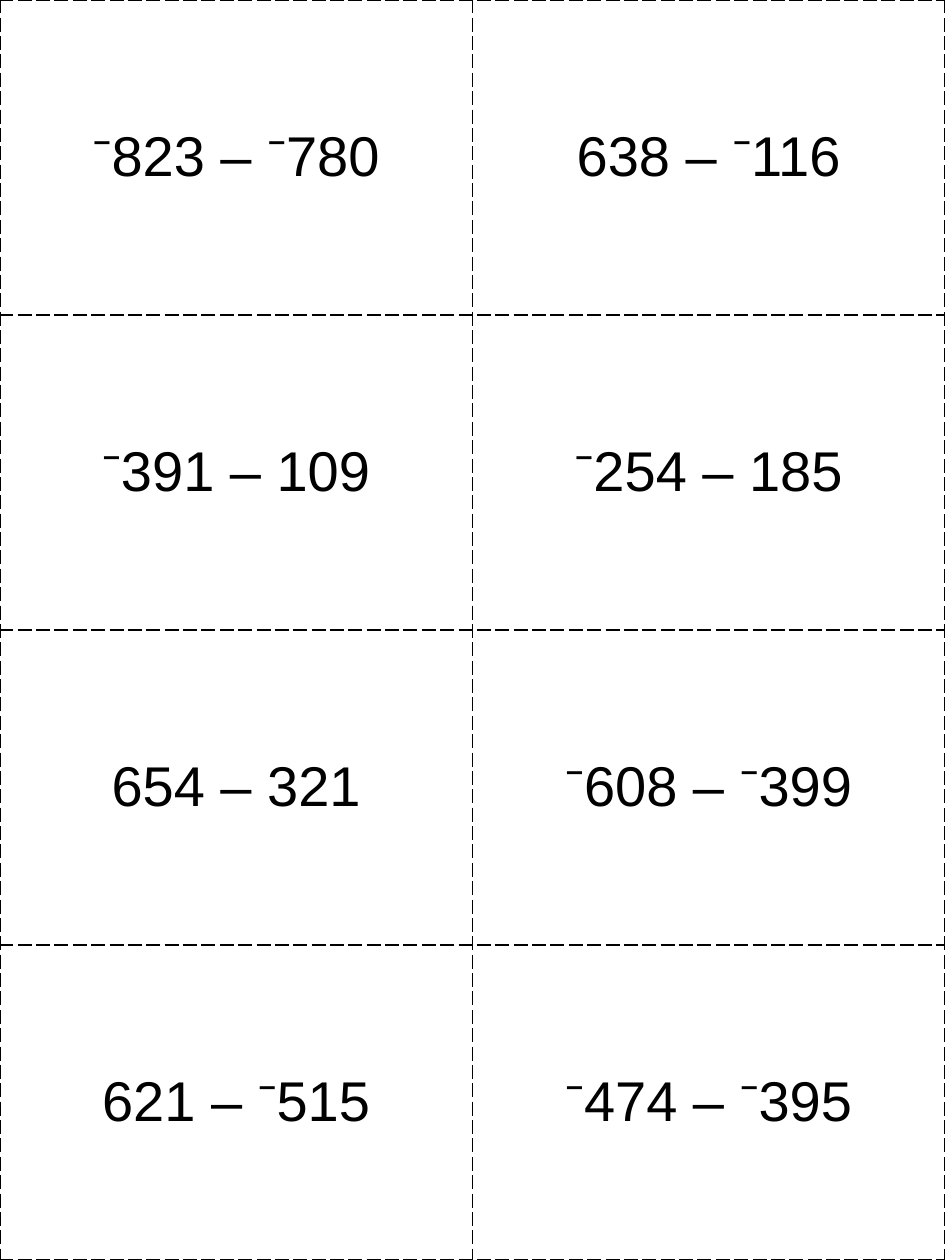
from pptx import Presentation
from pptx.dml.color import RGBColor
from pptx.enum.text import MSO_ANCHOR as ANCHOR, PP_ALIGN as ALIGN
from pptx.oxml.ns import qn
from pptx.util import Inches, Pt
from lxml.etree import SubElement

BLACK = RGBColor(0x00, 0x00, 0x00)
FONT = {"name": "Arial", "size": Pt(32), "bold": False}
CARDS = [
    ("⁻823 – ⁻780", "638 – ⁻116"),
    ("⁻391 – 109", "⁻254 – 185"),
    ("654 – 321", "⁻608 – ⁻399"),
    ("621 – ⁻515", "⁻474 – ⁻395"),
]


def add_borders(cell):
    tcPr = cell._tc.get_or_add_tcPr()
    for side in ("lnL", "lnR", "lnT", "lnB"):
        ln = SubElement(tcPr, qn(f"a:{side}"), w=str(Pt(1)))
        fill = SubElement(ln, qn("a:solidFill"))
        SubElement(fill, qn("a:srgbClr"), val=str(BLACK))
        SubElement(ln, qn("a:prstDash"), val="lgDash")


prs = Presentation()
prs.slide_width, prs.slide_height = Inches(7.5), Inches(10)
s = prs.slides.add_slide(prs.slide_layouts[6])

# Card grid fills the whole page, in equal columns and rows
table = s.shapes.add_table(len(CARDS), len(CARDS[0]), 0, 0,
                           prs.slide_width, prs.slide_height).table
table.first_row = table.horz_banding = False

# One subtraction per card
for row, problems in enumerate(CARDS):
    for col, problem in enumerate(problems):
        cell = table.cell(row, col)
        add_borders(cell)
        cell.fill.background()
        cell.vertical_anchor = ANCHOR.MIDDLE
        p = cell.text_frame.paragraphs[0]
        p.alignment = ALIGN.CENTER
        r = p.add_run()
        r.text = problem
        for key, value in FONT.items():
            setattr(r.font, key, value)
        r.font.color.rgb = BLACK

prs.save("out.pptx")
